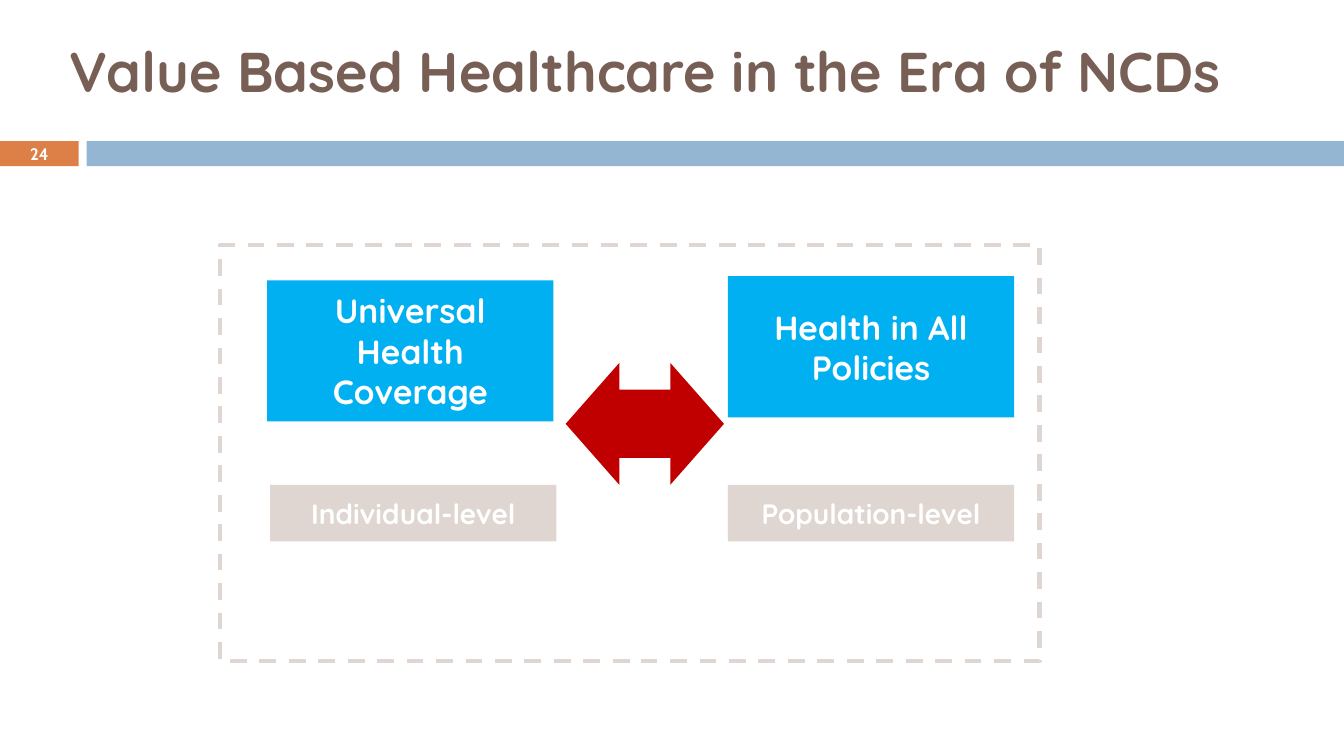
from pptx import Presentation
from pptx import util as u
from pptx.dml.color import RGBColor
from pptx.enum import dml, shapes, text

COLORS = {"orange": "DD8047", "band": "94B6D2", "title": "775F55", "white": "FFFFFF",
          "policy": "00B0F0", "level": "DFD6D2", "arrow": "C00000"}
SHAPE = shapes.MSO_SHAPE
MIDDLE = {"vertical_anchor": text.MSO_ANCHOR.MIDDLE, "word_wrap": True}


class Deck:
    """Draws styled elements placed in percent of the slide's width and height."""

    def __init__(self):
        self.prs = Presentation()
        self.prs.slide_width, self.prs.slide_height = u.Inches(13.33), u.Inches(7.5)
        self.s = self.prs.slides.add_slide(self.prs.slide_layouts[6])

    def place(self, x, y, w, h):
        sw, sh = self.prs.slide_width, self.prs.slide_height
        return [round(n * side / 100) for n, side in ((x, sw), (y, sh), (w, sw), (h, sh))]

    def color(self, name):
        return RGBColor.from_string(COLORS[name])

    def set_text(self, sp, words, size, color="white", font="Quicksand",
                 align=text.PP_ALIGN.CENTER, frame=MIDDLE):
        tf = sp.text_frame
        for name, value in frame.items():
            setattr(tf, name, value)
        p = tf.paragraphs[0]
        p.alignment = align
        r = p.add_run()
        r.text = words
        for name, value in {"size": u.Pt(size), "bold": True, "name": font}.items():
            setattr(r.font, name, value)
        r.font.color.rgb = self.color(color)

    def label(self, at, words, size, **style):
        self.set_text(self.s.shapes.add_textbox(*self.place(*at)), words, size, **style)

    def block(self, at, fill, kind=SHAPE.RECTANGLE):
        sp = self.s.shapes.add_shape(kind, *self.place(*at))
        sp.shadow.inherit = False
        sp.fill.solid()
        sp.fill.fore_color.rgb = self.color(fill)
        sp.line.fill.background()
        return sp

    def box(self, at, fill, words, size):
        self.set_text(self.block(at, fill), words, size)

    def frame(self, at, color):
        sp = self.s.shapes.add_shape(SHAPE.RECTANGLE, *self.place(*at))
        sp.shadow.inherit = False
        sp.fill.background()
        sp.line.color.rgb = self.color(color)
        for name, value in {"width": u.Pt(3), "dash_style": dml.MSO_LINE.DASH}.items():
            setattr(sp.line, name, value)

    def arrow(self, at, fill, *adjust):
        sp = self.block(at, fill, SHAPE.LEFT_RIGHT_ARROW)
        for i, value in enumerate(adjust):
            sp.adjustments[i] = value


def main():
    d = Deck()
    d.block((0, 18.67, 5.85, 3.33), "orange")
    d.block((6.45, 18.67, 93.55, 3.33), "band")
    flush = {f"margin_{side}": 0 for side in ("left", "right", "top", "bottom")}
    d.label((0, 18.53, 5.85, 3.6), "24", 11.9, font="Cabin", frame={**MIDDLE, **flush})
    d.label((4.43, 4.13, 89.57, 10.27), "Value Based Healthcare in the Era of NCDs", 40,
            color="title", align=text.PP_ALIGN.LEFT, frame={"word_wrap": True})

    for x, y, words in ((54.16, 36.53, "Health in All Policies"),
                        (19.88, 37.07, "Universal Health Coverage")):
        d.box((x, y, 21.3, 18.67), "policy", words, 24)
    for x, words in ((54.16, "Population-level"), (20.11, "Individual-level")):
        d.box((x, 64.13, 21.3, 7.47), "level", words, 20)

    d.frame((16.35, 32.4, 61, 55.07), "level")
    d.arrow((42.09, 48, 11.78, 16.13), "arrow", 0.56, 0.44)
    d.prs.save("out.pptx")


if __name__ == "__main__":
    main()
